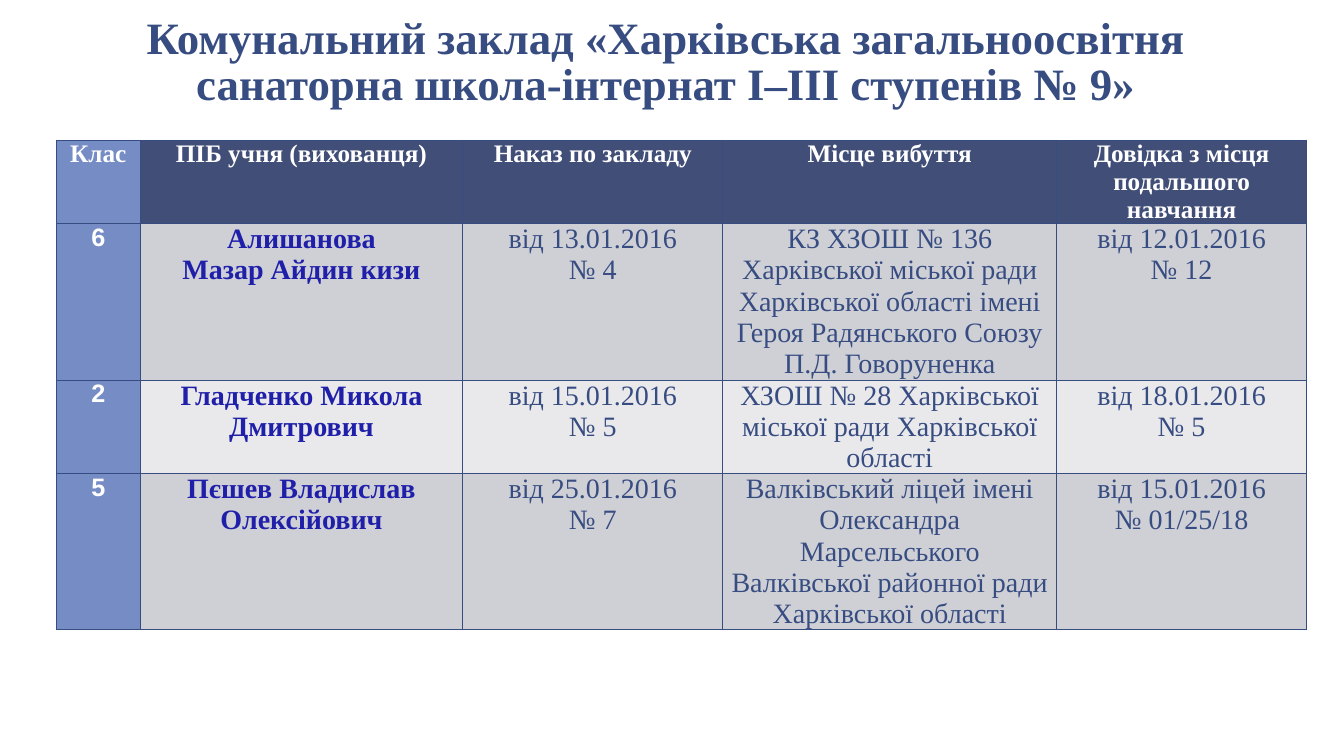
from lxml.etree import SubElement
from pptx import Presentation
from pptx.dml.color import RGBColor
from pptx.enum.text import MSO_ANCHOR, MSO_AUTO_SIZE, PP_ALIGN
from pptx.oxml.ns import qn
from pptx.util import Inches, Pt

NAVY = "374C81"
SERIF = "Times New Roman"
HEADER = {"size": Pt(18), "name": SERIF, "bold": True, "color": "FFFFFF"}
GRADE = {**HEADER, "name": "Arial"}
PUPIL = {"size": Pt(20), "name": SERIF, "bold": True, "color": "1F1FA9"}
DETAIL = {**PUPIL, "bold": False, "color": NAVY}
TITLE = {**HEADER, "size": Pt(32), "color": NAVY}

GRADE_FILL = "768CC5"
HEADER_FILL = "414E77"
BAND_FILLS = ["CFD0D6", "E9E9EC"]

COLUMN_WIDTHS = [0.83, 3.2, 2.58, 3.31, 2.48]
ROW_HEIGHTS = [0.83, 1.55, 0.93, 1.54]
ROWS = [
    ["Клас", "ПІБ учня (вихованця)", "Наказ по закладу", "Місце вибуття",
     "Довідка з місця подальшого навчання"],
    ["6", "Алишанова\nМазар Айдин кизи", "від 13.01.2016\n№ 4",
     "КЗ ХЗОШ № 136\nХарківської міської ради Харківської області імені "
     "Героя Радянського Союзу П.Д. Говоруненка",
     "від 12.01.2016\n№ 12"],
    ["2", "Гладченко Микола Дмитрович", "від 15.01.2016\n№ 5",
     "ХЗОШ № 28 Харківської міської ради Харківської області",
     "від 18.01.2016\n№ 5"],
    ["5", "Пєшев Владислав Олексійович", "від 25.01.2016\n№ 7",
     "Валківський ліцей імені Олександра Марсельського "
     "Валківської районної ради Харківської області",
     "від 15.01.2016\n№ 01/25/18"],
]


def color(value):
    return RGBColor.from_string(value)


def apply(target, values):
    for name, value in values.items():
        if name == "color":
            target.color.rgb = color(value)
        else:
            setattr(target, name, value)


class PageBuilder:
    def __init__(self, page, border_color, border_width):
        self.page = page
        self.border_color = border_color
        self.border_width = border_width

    def text(self, frame, words, style, spacing=None):
        frame.text = words
        for para in frame.paragraphs:
            para.alignment = PP_ALIGN.CENTER
            para.line_spacing = spacing
            for span in para.runs:
                apply(span.font, style)

    def title(self, words, left, top, width, height):
        box = self.page.shapes.title
        apply(box, {"left": Inches(left), "top": Inches(top),
                    "width": Inches(width), "height": Inches(height)})
        frame = box.text_frame
        apply(frame, {"word_wrap": True, "auto_size": MSO_AUTO_SIZE.NONE,
                      "vertical_anchor": MSO_ANCHOR.BOTTOM,
                      "margin_left": Inches(0.13), "margin_right": Inches(0.13),
                      "margin_top": Inches(0.07), "margin_bottom": Inches(0.07)})
        self.text(frame, words, TITLE, 0.85)

    def border(self, cell):
        properties = cell._tc.get_or_add_tcPr()
        for position, side in enumerate(["lnL", "lnR", "lnT", "lnB"]):
            line = properties.makeelement(qn(f"a:{side}"), {"w": str(self.border_width)})
            fill = SubElement(line, qn("a:solidFill"))
            SubElement(fill, qn("a:srgbClr"), val=self.border_color)
            properties.insert(position, line)

    def cell(self, cell, words, style, fill):
        apply(cell, {"margin_left": Inches(0.06), "margin_right": Inches(0.06),
                     "margin_top": 0, "margin_bottom": 0,
                     "vertical_anchor": MSO_ANCHOR.TOP})
        cell.fill.solid()
        cell.fill.fore_color.rgb = color(fill)
        self.border(cell)
        self.text(cell.text_frame, words, style)

    def table(self, rows, left, top):
        frame = self.page.shapes.add_table(
            len(rows), len(COLUMN_WIDTHS), Inches(left), Inches(top),
            Inches(sum(COLUMN_WIDTHS)), Inches(sum(ROW_HEIGHTS)))
        table = frame.table
        apply(table, {"first_row": False, "horz_banding": False})
        for column, width in zip(table.columns, COLUMN_WIDTHS):
            column.width = Inches(width)
        for row, height in zip(table.rows, ROW_HEIGHTS):
            row.height = Inches(height)
        for row_index, texts in enumerate(rows):
            band = BAND_FILLS[(row_index - 1) % 2] if row_index else HEADER_FILL
            styles = [GRADE, PUPIL] + [DETAIL] * 3 if row_index else [HEADER] * 5
            fills = [GRADE_FILL] + [band] * 4
            for column_index, values in enumerate(zip(texts, styles, fills)):
                self.cell(table.cell(row_index, column_index), *values)


def main():
    deck = Presentation()
    apply(deck, {"slide_width": Inches(13.33), "slide_height": Inches(7.5)})
    page = deck.slides.add_slide(deck.slide_layouts[5])
    builder = PageBuilder(page, NAVY, Pt(1))
    builder.title("Комунальний заклад «Харківська загальноосвітня "
                  "санаторна школа-інтернат I–III ступенів № 9»",
                  0.33, 0.29, 12.55, 0.87)
    builder.table(ROWS, 0.56, 1.39)
    deck.save("out.pptx")


if __name__ == "__main__":
    main()
